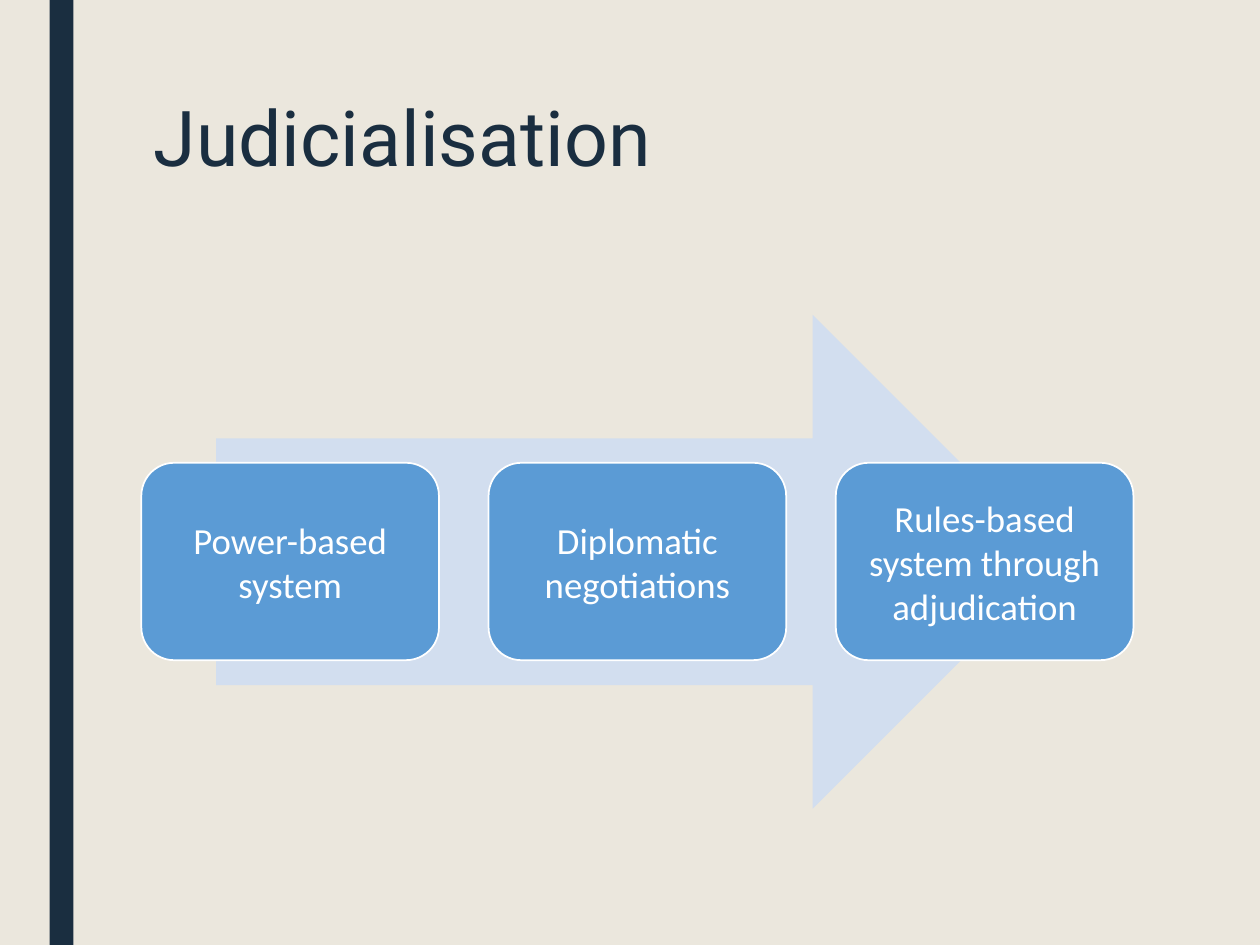
from pptx import Presentation
from pptx import util as u
from pptx.dml.color import RGBColor
from pptx.enum import shapes, text

COLORS = {
    "paper": "EBE7DD",
    "navy": "1A2E40",
    "arrow": "D2DEEF",
    "step": "5B9BD5",
    "white": "FFFFFF",
}


class Deck:
    """Holds the style and the current slide."""

    title_font, body_font = "Roboto", "Calibri"
    title_size, body_size = 44, 21

    def __init__(self, width, height):
        self.prs = Presentation()
        self.prs.slide_width, self.prs.slide_height = u.Cm(width), u.Cm(height)

    def color(self, name):
        return RGBColor.from_string(COLORS[name])

    def slide(self, background):
        self.s = self.prs.slides.add_slide(self.prs.slide_layouts[6])
        fill = self.s.background.fill
        fill.solid()
        fill.fore_color.rgb = self.color(background)

    def shape(self, kind, box, fill, line=None):
        sp = self.s.shapes.add_shape(kind, *map(u.Cm, box))
        sp.shadow.inherit = False
        sp.fill.solid()
        sp.fill.fore_color.rgb = self.color(fill)
        if line:
            sp.line.color.rgb = self.color(line)
            sp.line.width = u.Pt(1)
        else:
            sp.line.fill.background()
        return sp

    def add_words(self, p, words, font, size, color):
        r = p.add_run()
        r.text = words
        r.font.name, r.font.size = font, u.Pt(size)
        r.font.color.rgb = self.color(color)

    def title(self, words, box):
        tf = self.s.shapes.add_textbox(*map(u.Cm, box)).text_frame
        tf.word_wrap = True
        p = tf.paragraphs[0]
        p.line_spacing = 0.89
        self.add_words(p, words, self.title_font, self.title_size, "navy")

    def step(self, words, box):
        sp = self.shape(shapes.MSO_SHAPE.ROUNDED_RECTANGLE, box, "step", "white")
        tf = sp.text_frame
        tf.word_wrap = True
        tf.vertical_anchor = text.MSO_ANCHOR.MIDDLE
        tf.margin_left = tf.margin_right = u.Cm(0.23)
        tf.margin_top = tf.margin_bottom = u.Cm(0.23)
        p = tf.paragraphs[0]
        p.alignment = text.PP_ALIGN.CENTER
        self.add_words(p, words, self.body_font, self.body_size, "white")


def main():
    width, height = 25.4, 19.05
    left = 2.85
    deck = Deck(width, height)
    deck.slide("paper")

    # Side band and title
    deck.shape(shapes.MSO_SHAPE.RECTANGLE, (1, 0, 0.48, height), "navy")
    deck.title("Judicialisation", (left, 1.9, 20, 4.1))

    # Arrow behind the steps
    deck.shape(shapes.MSO_SHAPE.RIGHT_ARROW, (4.36, 6.35, 17, 9.95), "arrow")

    # Steps from left to right
    step_w, gap = 6, 1
    steps = [
        "Power-based system",
        "Diplomatic negotiations",
        "Rules-based system through adjudication",
    ]
    for i, words in enumerate(steps):
        deck.step(words, (left + i * (step_w + gap), 9.33, step_w, 3.98))

    deck.prs.save("out.pptx")


if __name__ == "__main__":
    main()
